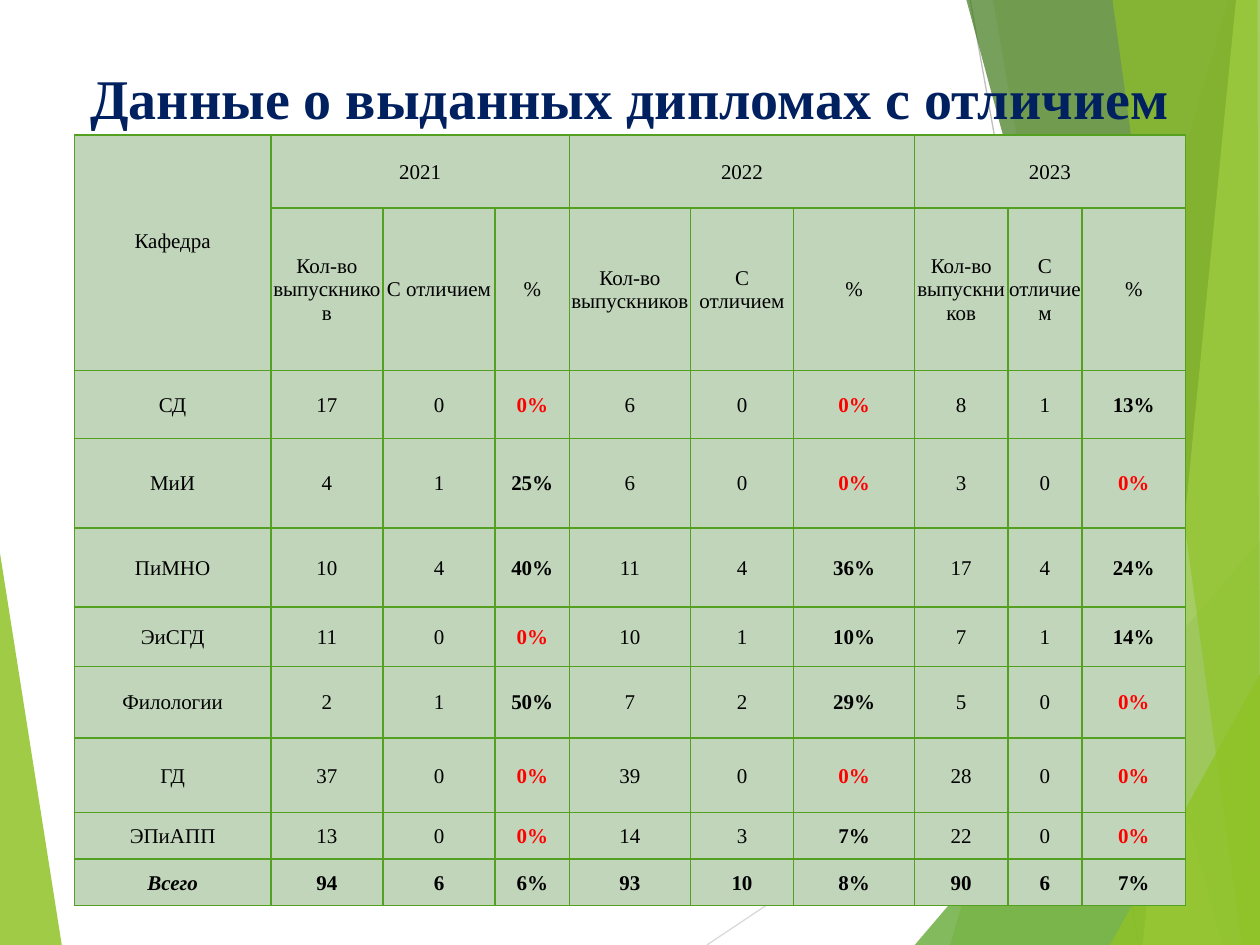
from lxml import etree
from pptx import Presentation
from pptx import util as u
from pptx.dml.color import RGBColor
from pptx.enum import shapes, text
from pptx.oxml import ns

PX = 9144  # EMU; 100 px to the inch
FONT = "Times New Roman"

NAVY = RGBColor(0x00, 0x20, 0x60)
BLACK = RGBColor(0x00, 0x00, 0x00)
RED = RGBColor(0xFF, 0x00, 0x00)
LIME = RGBColor(0x90, 0xC2, 0x26)
GREEN = RGBColor(0x54, 0xA0, 0x21)
FOREST = RGBColor(0x3F, 0x78, 0x19)
PALE_LIME = RGBColor(0xC0, 0xE4, 0x74)
SAGE = RGBColor(0xC1, 0xD5, 0xBB)
GREY = RGBColor(0xBF, 0xBF, 0xBF)
LIGHT_GREY = RGBColor(0xD9, 0xD9, 0xD9)

RAYS = [((561, 750), (1000, 457), LIGHT_GREY), ((770, 0), (904, 750), GREY)]

# colour, opacity in percent, corners
LEFT_FACET = (LIME, 85, [(0, 439), (49, 750), (0, 750)])
RIGHT_FACETS = [
    (LIME, 30, [(975, 0), (754, 750), (1000, 750), (1000, 0)]),
    (LIME, 20, [(788, 0), (919, 750), (1000, 750), (1000, 0)]),
    (GREEN, 72, [(726, 750), (1000, 429), (1000, 750)]),
    (FOREST, 70, [(767, 0), (970, 750), (1000, 750), (1000, 0)]),
    (PALE_LIME, 70, [(981, 0), (907, 750), (1000, 750), (1000, 0)]),
    (LIME, 65, [(883, 0), (986, 750), (1000, 750), (998, 0)]),
    (LIME, 80, [(881, 750), (1000, 535), (1000, 750)]),
]

YEARS = ["2021", "2022", "2023"]
MEASURES = ["Кол-во выпускников", "С отличием", "%"]
COLUMNS = [156, 89, 89, 59, 96, 82, 96, 74, 59, 82]
ROWS = [58, 129, 54, 71, 63, 47, 57, 59, 37, 37]
DEPARTMENTS = [
    ["СД", "17", "0", "0%", "6", "0", "0%", "8", "1", "13%"],
    ["МиИ", "4", "1", "25%", "6", "0", "0%", "3", "0", "0%"],
    ["ПиМНО", "10", "4", "40%", "11", "4", "36%", "17", "4", "24%"],
    ["ЭиСГД", "11", "0", "0%", "10", "1", "10%", "7", "1", "14%"],
    ["Филологии", "2", "1", "50%", "7", "2", "29%", "5", "0", "0%"],
    ["ГД", "37", "0", "0%", "39", "0", "0%", "28", "0", "0%"],
    ["ЭПиАПП", "13", "0", "0%", "14", "3", "7%", "22", "0", "0%"],
]
TOTAL = ["Всего", "94", "6", "6%", "93", "10", "8%", "90", "6", "7%"]


class Painter:
    """Holds the table style and the page being filled."""

    def __init__(self, page, fill=SAGE, border=GREEN, size=12):
        self.page = page
        self.fill = fill
        self.border = border
        self.size = size

    def ray(self, start, end, color):
        line = self.page.shapes.add_connector(
            shapes.MSO_CONNECTOR.STRAIGHT, *[v * PX for v in (*start, *end)])
        line.line.color.rgb = color
        line.line.width = u.Pt(0.75)
        etree.SubElement(line._element.spPr, ns.qn("a:effectLst"))

    def facet(self, color, opacity, corners):
        builder = self.page.shapes.build_freeform(*corners[0], scale=PX)
        builder.add_line_segments(corners[1:], close=True)
        shape = builder.convert_to_shape()
        shape.shadow.inherit = False
        shape.fill.solid()
        shape.fill.fore_color.rgb = color
        shape.line.fill.background()
        tint = shape._element.spPr.find(".//" + ns.qn("a:srgbClr"))
        etree.SubElement(tint, ns.qn("a:alpha"), val=str(opacity * 1000))

    def title(self, words, left, top, width, height):
        """Fill the title placeholder and bring it in front of the facets."""
        box = self.page.shapes.title
        self.page.shapes._spTree.append(box._element)
        box.left, box.top = left * PX, top * PX
        box.width, box.height = width * PX, height * PX
        frame = box.text_frame
        frame.word_wrap = True
        frame.auto_size = text.MSO_AUTO_SIZE.NONE
        frame.vertical_anchor = text.MSO_ANCHOR.BOTTOM
        frame.margin_bottom = 3 * PX
        self.set_words(frame, words, 32, NAVY, bold=True)

    def set_words(self, frame, words, size, color, bold=False, italic=False):
        frame.text = words
        para = frame.paragraphs[0]
        para.alignment = text.PP_ALIGN.CENTER
        font = para.font
        font.name, font.size = FONT, u.Pt(size)
        font.bold, font.italic = bold, italic
        font.color.rgb = color

    def table(self, left, top, columns, rows):
        frame = self.page.shapes.add_table(
            len(rows), len(columns), left * PX, top * PX,
            sum(columns) * PX, sum(rows) * PX)
        table = frame.table
        table.first_row = table.horz_banding = False
        for column, width in zip(table.columns, columns):
            column.width = width * PX
        for row, height in zip(table.rows, rows):
            row.height = height * PX
        for cell in table.iter_cells():
            self.style_cell(cell)
        return table

    def style_cell(self, cell):
        cell.fill.solid()
        cell.fill.fore_color.rgb = self.fill
        cell.vertical_anchor = text.MSO_ANCHOR.MIDDLE
        cell.margin_left = cell.margin_right = cell.margin_top = PX
        cell.margin_bottom = 0
        for place, side in enumerate(("lnL", "lnR", "lnT", "lnB")):
            edge = etree.Element(ns.qn("a:" + side), w=str(u.Pt(1)))
            paint = etree.SubElement(edge, ns.qn("a:solidFill"))
            etree.SubElement(paint, ns.qn("a:srgbClr"), val=str(self.border))
            cell._tc.tcPr.insert(place, edge)

    def cell(self, cell, words, color=BLACK, bold=False, italic=False):
        self.set_words(cell.text_frame, words, self.size, color, bold, italic)


def fill_header(painter, table):
    corner = table.cell(0, 0)
    corner.merge(table.cell(1, 0))
    corner.margin_bottom = 19 * PX
    painter.cell(corner, "Кафедра")
    span = len(MEASURES)
    for index, year in enumerate(YEARS):
        first = 1 + index * span
        table.cell(0, first).merge(table.cell(0, first + span - 1))
        painter.cell(table.cell(0, first), year)
        for offset, measure in enumerate(MEASURES):
            painter.cell(table.cell(1, first + offset), measure)


def fill_body(painter, table):
    for row, values in enumerate(DEPARTMENTS + [TOTAL], start=2):
        total = values is TOTAL
        for column, value in enumerate(values):
            painter.cell(table.cell(row, column), value,
                         color=RED if value == "0%" else BLACK,
                         bold=total or value.endswith("%"),
                         italic=total and column == 0)


def main():
    deck = Presentation()
    deck.slide_width, deck.slide_height = 1000 * PX, 750 * PX
    painter = Painter(deck.slides.add_slide(deck.slide_layouts[5]))
    painter.facet(*LEFT_FACET)
    for ray in RAYS:
        painter.ray(*ray)
    for facet in RIGHT_FACETS:
        painter.facet(*facet)
    painter.title("Данные о выданных дипломах с отличием", 50, 44, 900, 63)
    table = painter.table(59, 107, COLUMNS, ROWS)
    fill_header(painter, table)
    fill_body(painter, table)
    deck.save("out.pptx")


if __name__ == "__main__":
    main()
